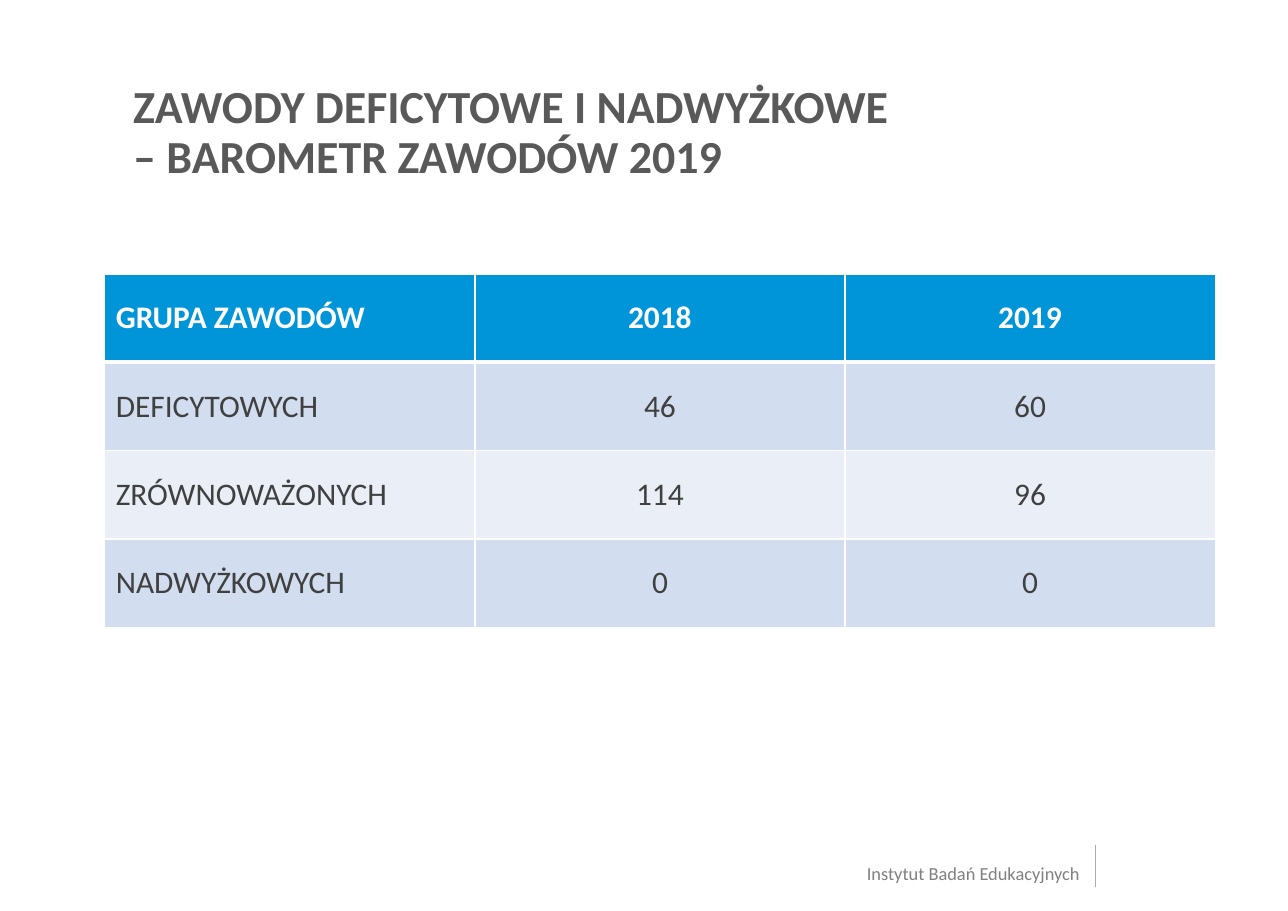
import pptx
import pptx.dml.color
import pptx.enum.shapes
import pptx.enum.text
import pptx.oxml
import pptx.oxml.ns
import pptx.util

Pt = pptx.util.Pt
RGBColor = pptx.dml.color.RGBColor
Align = pptx.enum.text.PP_ALIGN
Anchor = pptx.enum.text.MSO_ANCHOR

WHITE = RGBColor(0xFF, 0xFF, 0xFF)
HEADER_BLUE = RGBColor(0x00, 0x94, 0xD8)
BANDS = RGBColor(0xEA, 0xEF, 0xF7), RGBColor(0xD2, 0xDE, 0xEF)
TITLE_GRAY = RGBColor(0x59, 0x59, 0x59)
BODY_GRAY = RGBColor(0x40, 0x40, 0x40)
FOOTER_GRAY = RGBColor(0x80, 0x80, 0x80)
RULE_GRAY = RGBColor(0xAF, 0xAB, 0xAB)

OCCUPATIONS = [
    ("GRUPA ZAWODÓW", "2018", "2019"),
    ("DEFICYTOWYCH", "46", "60"),
    ("ZRÓWNOWAŻONYCH", "114", "96"),
    ("NADWYŻKOWYCH", "0", "0"),
]


class SlideBuilder:
    font_name = "Calibri"

    def __init__(self, page):
        self.page = page

    def style(self, para, size, color, bold=False, align=Align.LEFT):
        para.alignment = align
        font = para.font
        font.name, font.size, font.bold = self.font_name, Pt(size), bold
        font.color.rgb = color

    def bare_frame(self, box, wrap):
        frame = box.text_frame
        frame.margin_left = frame.margin_top = 0
        frame.margin_right = frame.margin_bottom = 0
        frame.auto_size = pptx.enum.text.MSO_AUTO_SIZE.NONE
        frame.vertical_anchor = Anchor.TOP
        frame.word_wrap = wrap
        return frame

    def title(self, text, left, top, width, height):
        box = self.page.shapes.title
        box.left, box.top = Pt(left), Pt(top)
        box.width, box.height = Pt(width), Pt(height)
        frame = self.bare_frame(box, True)
        frame.text = text
        para = frame.paragraphs[0]
        para.line_spacing = 0.9
        self.style(para, 30, TITLE_GRAY, bold=True)

    def label(self, text, left, top, width, height):
        box = self.page.shapes.add_textbox(Pt(left), Pt(top), Pt(width), Pt(height))
        frame = self.bare_frame(box, False)
        frame.text = text
        self.style(frame.paragraphs[0], 12, FOOTER_GRAY)

    def vertical_rule(self, left, top, bottom):
        rule = self.page.shapes.add_connector(
            pptx.enum.shapes.MSO_CONNECTOR.STRAIGHT, Pt(left), Pt(top), Pt(left), Pt(bottom))
        rule.line.color.rgb = RULE_GRAY
        rule.line.width = Pt(0.5)
        rule._element.spPr.append(pptx.oxml.parse_xml(
            f'<a:effectLst {pptx.oxml.ns.nsdecls("a")}/>'))

    def borders(self, cell, widths):
        properties = cell._tc.get_or_add_tcPr()
        for position, (side, width) in enumerate(widths.items()):
            properties.insert(position, pptx.oxml.parse_xml(
                f'<a:ln{side} {pptx.oxml.ns.nsdecls("a")} w="{Pt(width)}">'
                f'<a:solidFill><a:srgbClr val="{WHITE}"/></a:solidFill></a:ln{side}>'))

    def table(self, rows, left, top, column_width, row_height):
        count = len(rows[0])
        table = self.page.shapes.add_table(
            len(rows), count, Pt(left), Pt(top),
            Pt(column_width * count), Pt(row_height * len(rows))).table
        for column in table.columns:
            column.width = Pt(column_width)
        for row_index, row in enumerate(rows):
            table.rows[row_index].height = Pt(row_height)
            header = row_index == 0
            for column_index, text in enumerate(row):
                cell = table.cell(row_index, column_index)
                cell.text = text
                cell.vertical_anchor = Anchor.MIDDLE
                cell.fill.solid()
                cell.fill.fore_color.rgb = HEADER_BLUE if header else BANDS[row_index % 2]
                self.borders(cell, {"L": 1, "R": 1, "T": 3 if row_index == 1 else 1,
                                    "B": 3 if header else 1})
                self.style(cell.text_frame.paragraphs[0], 20.5,
                           WHITE if header else BODY_GRAY, bold=header,
                           align=Align.CENTER if column_index else Align.LEFT)


def main():
    deck = pptx.Presentation()
    deck.slide_width, deck.slide_height = Pt(841), Pt(594.75)
    builder = SlideBuilder(deck.slides.add_slide(deck.slide_layouts[5]))
    builder.vertical_rule(715.5, 551.5, 579)
    builder.label("Instytut Badań Edukacyjnych", 566, 563, 140.5, 15)
    builder.title("ZAWODY DEFICYTOWE I NADWYŻKOWE\v– BAROMETR ZAWODÓW 2019",
                  87, 54.75, 725, 61)
    builder.table(OCCUPATIONS, 68.4, 178.8, 241.7, 57.7)
    deck.save("out.pptx")


if __name__ == "__main__":
    main()
